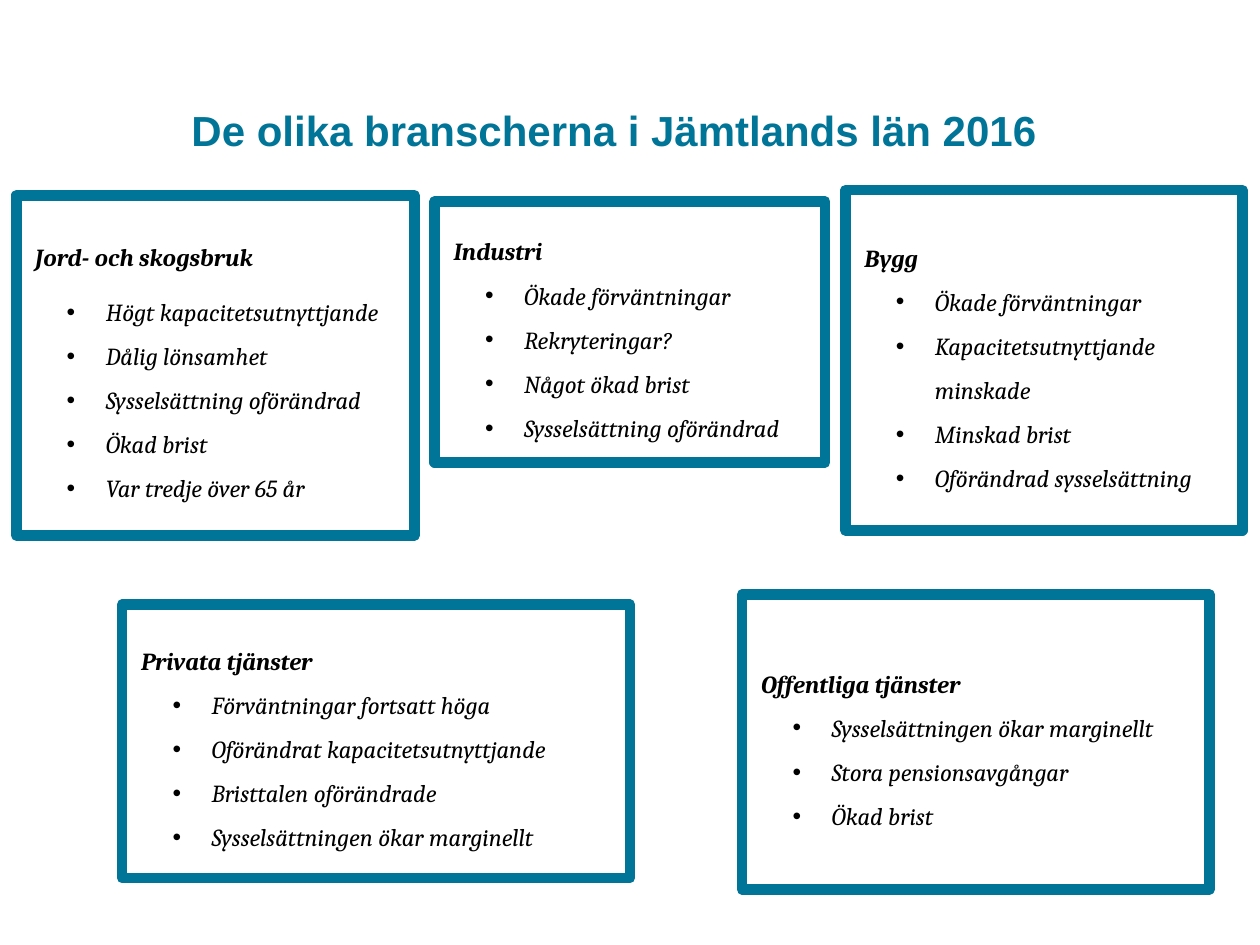
from lxml import etree
from pptx import Presentation
from pptx.dml.color import RGBColor
from pptx.enum.shapes import MSO_SHAPE
from pptx.enum.text import MSO_ANCHOR, PP_ALIGN
from pptx.oxml.ns import qn
from pptx.util import Inches, Pt

TEAL = "007597"
BLACK = "000000"

SECTORS = [
    ("Jord- och skogsbruk", (0.13, 1.55, 3.16, 2.7), 6,
     ["Högt kapacitetsutnyttjande", "Dålig lönsamhet",
      "Sysselsättning oförändrad", "Ökad brist", "Var tredje över 65 år"]),
    ("Industri", (3.45, 1.6, 3.1, 2.07), 0,
     ["Ökade förväntningar", "Rekryteringar?", "Något ökad brist",
      "Sysselsättning oförändrad"]),
    ("Bygg", (6.71, 1.51, 3.15, 2.7), 0,
     ["Ökade förväntningar", "Kapacitetsutnyttjande minskade",
      "Minskad brist", "Oförändrad sysselsättning"]),
    ("Privata tjänster", (0.97, 4.8, 4.03, 2.17), 0,
     ["Förväntningar fortsatt höga", "Oförändrat kapacitetsutnyttjande",
      "Bristtalen oförändrade", "Sysselsättningen ökar marginellt"]),
    ("Offentliga tjänster", (5.89, 4.72, 3.71, 2.34), 0,
     ["Sysselsättningen ökar marginellt", "Stora pensionsavgångar",
      "Ökad brist"]),
]


def rgb(color):
    return RGBColor.from_string(color)


def add_bullet(p):
    """Give the paragraph a bullet with a hanging indent."""
    pPr = p._p.get_or_add_pPr()
    pPr.set("marL", str(Inches(0.56)))
    pPr.set("indent", str(Inches(-0.31)))
    etree.SubElement(pPr, qn("a:buFont")).set("typeface", "Arial")
    etree.SubElement(pPr, qn("a:buChar")).set("char", "•")


prs = Presentation()
prs.slide_width, prs.slide_height = Inches(10), Inches(7.5)
s = prs.slides.add_slide(prs.slide_layouts[6])

# Title
title = s.shapes.add_textbox(Inches(1.52), Inches(0.66), Inches(6.96), Inches(0.57))
tf = title.text_frame
tf.word_wrap = True
tf.vertical_anchor = MSO_ANCHOR.BOTTOM
tf.margin_left = tf.margin_right = tf.margin_top = tf.margin_bottom = 0
tf.text = "De olika branscherna i Jämtlands län 2016"
font = tf.paragraphs[0].runs[0].font
font.name, font.size, font.bold = "Arial", Pt(24), True
font.color.rgb = rgb(TEAL)

# One framed box per sector
for heading, box, heading_gap, points in SECTORS:
    sp = s.shapes.add_shape(MSO_SHAPE.RECTANGLE, *map(Inches, box))
    sp.shadow.inherit = False
    sp.fill.background()
    sp.line.color.rgb = rgb(TEAL)
    sp.line.width = Pt(6)

    tf = sp.text_frame
    tf.word_wrap = True
    tf.vertical_anchor = MSO_ANCHOR.MIDDLE
    tf.margin_left = tf.margin_right = Inches(0.15)
    tf.margin_top = tf.margin_bottom = Inches(0.1)
    tf.text = "\n".join([heading, *points])

    for i, p in enumerate(tf.paragraphs):
        p.alignment = PP_ALIGN.LEFT
        p.line_spacing = 1.5
        if i == 0:
            p.space_after = Pt(heading_gap)
        else:
            add_bullet(p)
        font = p.runs[0].font
        font.name, font.size = "Cambria", Pt(14)
        font.bold, font.italic = i == 0, True
        font.color.rgb = rgb(BLACK)

prs.save("out.pptx")
